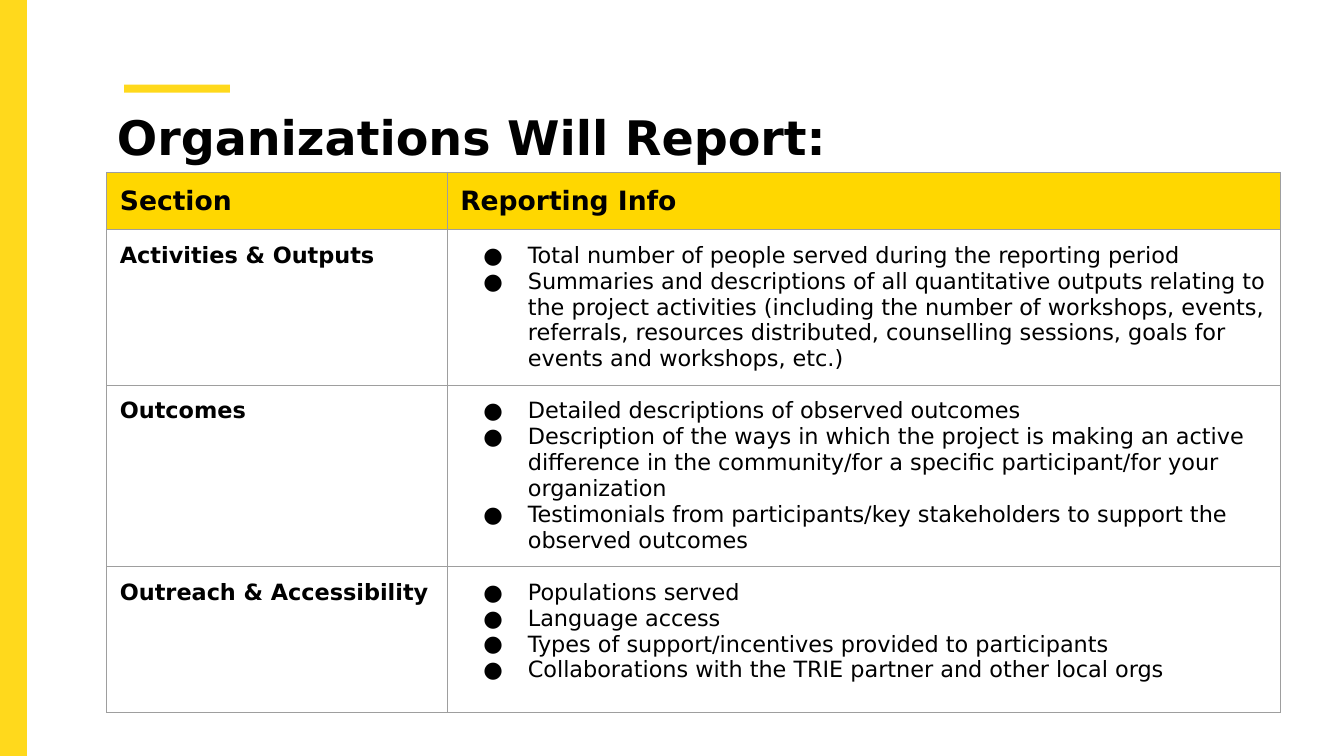
from lxml import etree
from pptx import Presentation, util as u
from pptx.dml.color import RGBColor
from pptx.enum import shapes, text
from pptx.oxml import ns

WIDTH, HEIGHT = 13.33, 7.5
FACE = "DejaVu Sans"
BLACK, WHITE, ACCENT, HEADER, GRID = "000000", "FFFFFF", "FFD91C", "FFD700", "9E9E9E"
COLUMNS = (0.29, 0.71)
ROWS = (0.56, 1.52, 1.77, 1.45)
SECTIONS = [
    ("Activities & Outputs", [
        "Total number of people served during the reporting period",
        "Summaries and descriptions of all quantitative outputs relating to the project "
        "activities (including the number of workshops, events, referrals, resources "
        "distributed, counselling sessions, goals for events and workshops, etc.)"]),
    ("Outcomes", [
        "Detailed descriptions of observed outcomes",
        "Description of the ways in which the project is making an active difference in "
        "the community/for a specific participant/for your organization",
        "Testimonials from participants/key stakeholders to support the observed outcomes"]),
    ("Outreach & Accessibility", [
        "Populations served",
        "Language access",
        "Types of support/incentives provided to participants",
        "Collaborations with the TRIE partner and other local orgs"]),
]


def color(value):
    """Turn a hex string into a colour."""
    return RGBColor.from_string(value)


def apply(target, formats):
    """Set every attribute in formats on the target."""
    for name, value in formats.items():
        setattr(target, name, value)


def add_child(parent, tag, **attributes):
    """Append a drawing element to the parent."""
    return etree.SubElement(parent, ns.qn(tag), attributes)


def write(para, words, size, bold):
    """Write one formatted span in a paragraph."""
    span = para.add_run()
    span.text = words
    apply(span.font, {"name": FACE, "size": u.Pt(size), "bold": bold})
    span.font.color.rgb = color(BLACK)


def add_bullet(para):
    """Give a paragraph a round bullet with a hanging indent."""
    props = para._p.get_or_add_pPr()
    props.set("marL", str(u.Inches(0.67)))
    props.set("indent", str(u.Inches(-0.44)))
    add_child(add_child(props, "a:buClr"), "a:srgbClr", val=BLACK)
    add_child(props, "a:buFont", typeface=FACE)
    add_child(props, "a:buChar", char="●")


def add_bar(page, left, top, width, height):
    """Draw a plain accent bar in the given box."""
    bar = page.shapes.add_shape(shapes.MSO_SHAPE.RECTANGLE,
                                *map(u.Inches, (left, top, width, height)))
    bar.shadow.inherit = False
    bar.fill.solid()
    bar.fill.fore_color.rgb = color(ACCENT)
    bar.line.fill.background()


def place_title(page, left, top, width, height):
    """Place the heading in the given box with its accent bar above."""
    add_bar(page, left + 0.17, top - 0.14, 1.05, 0.08)
    title = page.shapes.title
    apply(title, dict(zip(("left", "top", "width", "height"),
                          map(u.Inches, (left, top, width, height)))))
    frame = title.text_frame
    apply(frame, {"word_wrap": True, "auto_size": text.MSO_AUTO_SIZE.NONE,
                  "vertical_anchor": text.MSO_ANCHOR.TOP,
                  "margin_left": u.Inches(0.1), "margin_right": u.Inches(0.1),
                  "margin_top": u.Inches(0.09), "margin_bottom": u.Inches(0.05)})
    para = frame.paragraphs[0]
    apply(para, {"alignment": text.PP_ALIGN.LEFT, "line_spacing": 1.0,
                 "space_before": u.Pt(0)})
    write(para, "Organizations Will Report:", 34, True)


def fill_cell(cell, lines, size, bold, fill, bulleted):
    """Write lines in a table cell and set its borders, margins and fill."""
    props = cell._tc.get_or_add_tcPr()
    for side in "LRTB":
        line = add_child(props, f"a:ln{side}", w=str(u.Pt(0.75)))
        add_child(add_child(line, "a:solidFill"), "a:srgbClr", val=GRID)
    cell.fill.solid()
    cell.fill.fore_color.rgb = color(fill)
    apply(cell, {f"margin_{side}": u.Inches(0.13)
                 for side in ("left", "right", "top", "bottom")})
    frame = cell.text_frame
    for index, words in enumerate(lines):
        para = frame.add_paragraph() if index else frame.paragraphs[0]
        if bulleted:
            add_bullet(para)
        write(para, words, size, bold)


def place_table(page, left, top, width):
    """Place the reporting table at the given corner and width."""
    table = page.shapes.add_table(
        len(ROWS), len(COLUMNS),
        *map(u.Inches, (left, top, width, sum(ROWS)))).table
    for column, share in zip(table.columns, COLUMNS):
        column.width = u.Inches(width * share)
    for row, height in zip(table.rows, ROWS):
        row.height = u.Inches(height)
    for index, heading in enumerate(("Section", "Reporting Info")):
        fill_cell(table.cell(0, index), [heading], 19, True, HEADER, False)
    for index, (section, details) in enumerate(SECTIONS, 1):
        fill_cell(table.cell(index, 0), [section], 16, True, WHITE, False)
        fill_cell(table.cell(index, 1), details, 16, False, WHITE, True)


def main():
    """Build and save the reporting slide."""
    deck = Presentation()
    apply(deck, {"slide_width": u.Inches(WIDTH), "slide_height": u.Inches(HEIGHT)})
    page = deck.slides.add_slide(deck.slide_layouts[5])
    add_bar(page, 0, 0, WIDTH * 0.02, HEIGHT)
    place_title(page, 1.06, 0.98, 11.06, 0.8)
    place_table(page, 1.06, 1.71, 11.64)
    deck.save("out.pptx")


if __name__ == "__main__":
    main()
